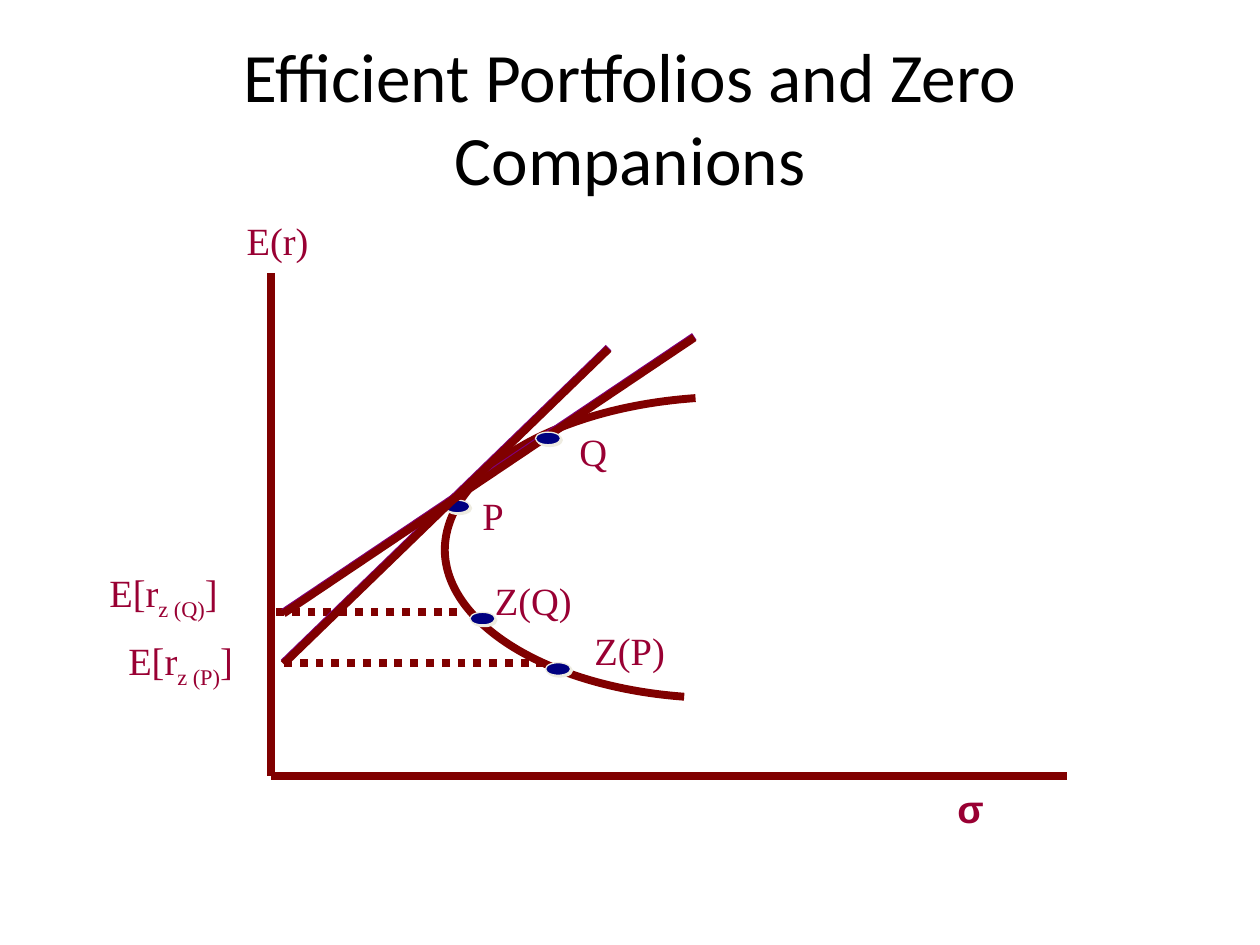
from dataclasses import dataclass

from lxml import etree
from pptx import Presentation
from pptx.dml.color import RGBColor
from pptx.enum.dml import MSO_LINE
from pptx.enum.shapes import MSO_CONNECTOR, MSO_SHAPE
from pptx.enum.text import MSO_ANCHOR, MSO_AUTO_SIZE, PP_ALIGN
from pptx.oxml import parse_xml
from pptx.oxml.ns import nsdecls, qn
from pptx.util import Inches, Pt

CELL = Inches(0.1)  # the slide is a grid of 100 columns by 75 rows


@dataclass(frozen=True)
class Theme:
    title_color: RGBColor = RGBColor(0, 0, 0)
    stroke: RGBColor = RGBColor.from_string("800000")
    under_stroke: RGBColor = RGBColor.from_string("800080")
    label: RGBColor = RGBColor.from_string("990033")
    dot: RGBColor = RGBColor.from_string("000080")
    dot_edge: RGBColor = RGBColor.from_string("EEECE1")
    title_size: Pt = Pt(39.6)
    label_size: Pt = Pt(22)
    stroke_width: Pt = Pt(4.5)
    edge_width: Pt = Pt(0.75)
    title_font: str = "Calibri"
    label_font: str = "Times New Roman"
    symbol_font: str = "Arial"


@dataclass(frozen=True)
class Box:
    """A grid region; its points are measured right and up from its lower left corner."""
    left: float
    top: float
    width: float
    height: float

    def point(self, right, up):
        return (round((self.left + right) * CELL),
                round((self.top + self.height - up) * CELL))


THEME = Theme()
TITLE_BOX = Box(5, 3, 90, 12.5)
PLOT_BOX = Box(21.5, 21.7, 63.2, 39.9)

LABEL_HEIGHT = 4.7
DOT_SIZE = (2, 1)
TANGENT_GAP = 0.1

FRONTIER = [(32.8, 6.3),
            (21.9, 7.1), (13.9, 12.1), (13.8, 17.9),
            (13.8, 24), (22.3, 29.2), (33.7, 30)]
TANGENTS = [((1, 13), (33.6, 34.9)), ((1, 9), (26.8, 34))]
ZERO_LEVELS = [((21.7, 9), (1, 9)), ((14.8, 13), (0, 13))]
COMPANION_DOTS = [(21.8, 9), (15.8, 13), (13.8, 21.9)]
TOP_DOT = (21, 27.3)

# text, subscript, closing text, left, top, width, wraps
LABELS = [
    ("Q", "", "", 23.5, 28.1, 4.2, False),
    ("P", "", "", 15.8, 23, 4.2, True),
    ("Z(Q)", "", "", 16.8, 16.3, 8.1, False),
    ("Z(P)", "", "", 24.7, 12.3, 7.6, False),
    ("E[r", "z (Q)", "]", -13.8, 16.9, 13.8, True),
    ("E[r", "z (P)", "]", -12.3, 11.5, 11, False),
    ("E(r)", "", "", -2.9, 44.9, 8.9, True),
    ("σ", "", "", 53.5, -0.2, 4.8, True),
]


def format_run(run, font, size, color, bold=False):
    run.font.name = font
    run.font.size = size
    run.font.color.rgb = color
    run.font.bold = bold


def add_title(slide, box, text):
    title = slide.shapes.title
    title.left, title.top = box.point(0, box.height)
    title.width, title.height = round(box.width * CELL), round(box.height * CELL)
    frame = title.text_frame
    frame.text = text
    frame.word_wrap = True
    frame.vertical_anchor = MSO_ANCHOR.MIDDLE
    paragraph = frame.paragraphs[0]
    paragraph.alignment = PP_ALIGN.CENTER
    format_run(paragraph.runs[0], THEME.title_font, THEME.title_size, THEME.title_color)


def add_line(slide, box, start, end, color=THEME.stroke, dash=None):
    line = slide.shapes.add_connector(
        MSO_CONNECTOR.STRAIGHT, *box.point(*start), *box.point(*end))
    line.line.color.rgb = color
    line.line.width = THEME.stroke_width
    if dash:
        line.line.dash_style = dash
    etree.SubElement(line._element.spPr, qn("a:effectLst"))


def add_frontier(slide, box, points):
    """Draw a Bézier curve: a start point, then two handles and an end per segment."""
    start, *rest = [box.point(*point) for point in points]
    builder = slide.shapes.build_freeform(*start)
    builder.add_line_segments(rest, close=False)
    shape = builder.convert_to_shape()
    shape.shadow.inherit = False
    shape.fill.background()
    shape.line.color.rgb = THEME.stroke
    shape.line.width = THEME.stroke_width
    segments = list(shape._element.iter(qn("a:lnTo")))
    for index in range(0, len(segments), 3):
        curve = etree.Element(qn("a:cubicBezTo"))
        segments[index].addprevious(curve)
        for segment in segments[index:index + 3]:
            curve.append(segment[0])
            segment.getparent().remove(segment)


def add_dot(slide, box, position):
    dot = slide.shapes.add_shape(
        MSO_SHAPE.OVAL, *box.point(*position), *[size * CELL for size in DOT_SIZE])
    dot.fill.solid()
    dot.fill.fore_color.rgb = THEME.dot
    dot.line.color.rgb = THEME.dot_edge
    dot.line.width = THEME.edge_width
    dot._element.spPr.append(parse_xml(
        f'<a:effectLst {nsdecls("a")}>'
        f'<a:outerShdw dist="{Pt(1.4)}" dir="2700000" algn="ctr" rotWithShape="0">'
        f'<a:srgbClr val="{THEME.dot_edge}"/></a:outerShdw></a:effectLst>'))


def add_label(slide, box, text, subscript, closing, left, top, width, wraps):
    label = slide.shapes.add_textbox(
        *box.point(left, top), round(width * CELL), round(LABEL_HEIGHT * CELL))
    frame = label.text_frame
    frame.word_wrap = wraps
    frame.auto_size = MSO_AUTO_SIZE.SHAPE_TO_FIT_TEXT
    paragraph = frame.paragraphs[0]
    is_symbol = text == "σ"
    font = THEME.symbol_font if is_symbol else THEME.label_font
    for part in filter(None, (text, subscript, closing)):
        run = paragraph.add_run()
        run.text = part
        format_run(run, font, THEME.label_size, THEME.label, bold=is_symbol)
        if part == subscript:
            run._r.get_or_add_rPr().set("baseline", "-25000")


def add_plot(slide, box):
    origin = (0, 0)
    add_line(slide, box, (0, box.height), origin)
    add_line(slide, box, origin, (box.width, 0))
    add_frontier(slide, box, FRONTIER)
    for label in LABELS:
        add_label(slide, box, *label)
    for start, end in ZERO_LEVELS:
        add_line(slide, box, start, end, dash=MSO_LINE.ROUND_DOT)
    for start, end in TANGENTS:
        add_line(slide, box, start, end, THEME.under_stroke)
    for position in COMPANION_DOTS:
        add_dot(slide, box, position)
    for tangent in TANGENTS:
        start, end = [(right, up - TANGENT_GAP) for right, up in tangent]
        add_line(slide, box, start, end)
    add_dot(slide, box, TOP_DOT)


def main():
    presentation = Presentation()
    presentation.slide_width = 100 * CELL
    presentation.slide_height = 75 * CELL
    slide = presentation.slides.add_slide(presentation.slide_layouts[5])
    add_title(slide, TITLE_BOX, "Efficient Portfolios and Zero Companions")
    add_plot(slide, PLOT_BOX)
    presentation.save("out.pptx")


if __name__ == "__main__":
    main()
